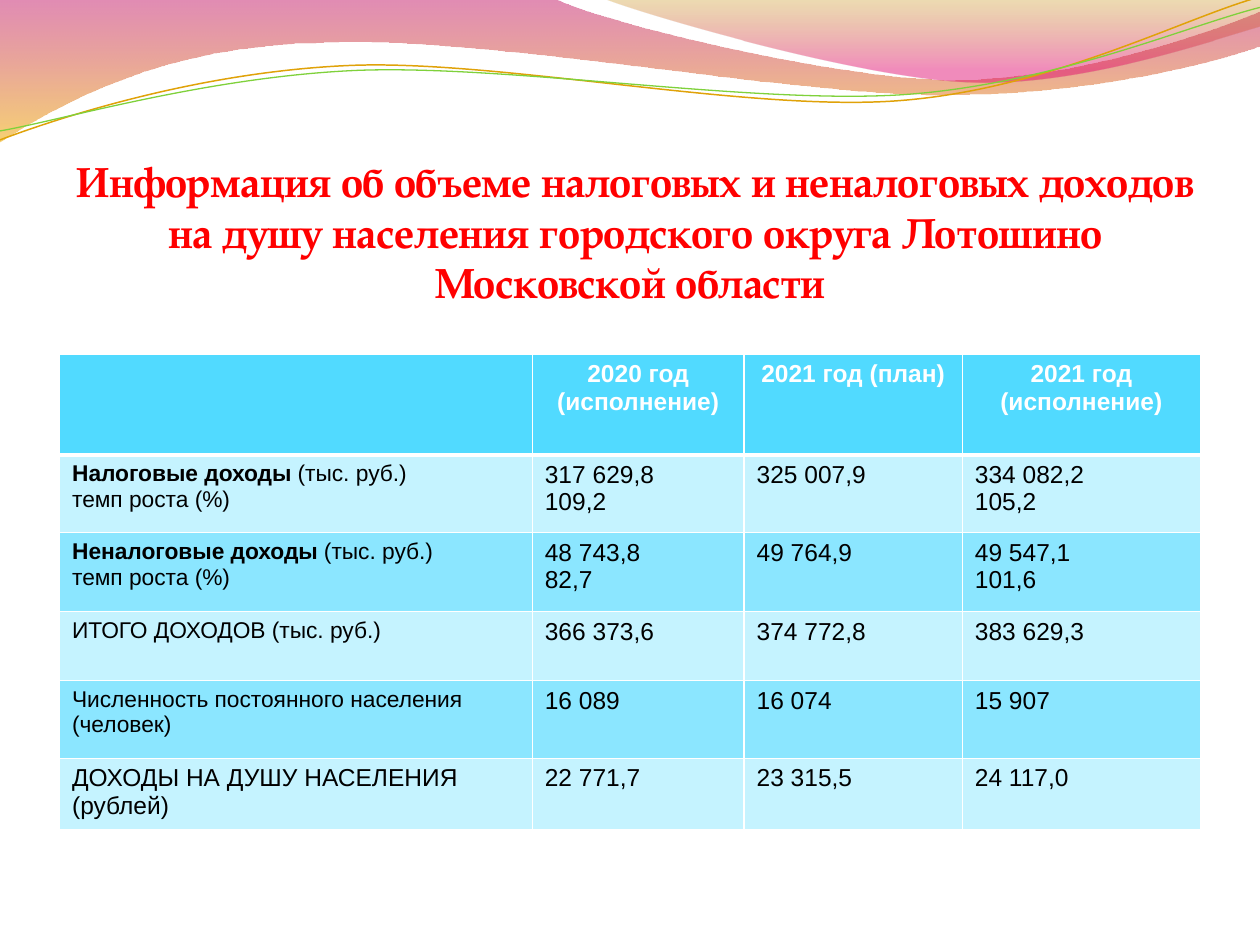
from math import cos, radians, sin

from lxml.etree import SubElement
from pptx import Presentation
from pptx.dml.color import RGBColor as Rgb
from pptx.enum.text import MSO_ANCHOR as Anchor, PP_ALIGN as Align
from pptx.oxml.ns import qn
from pptx.util import Cm, Pt

# Content
TITLE = ("Информация об объеме налоговых и неналоговых доходов на душу населения "
         "городского округа Лотошино Московской области ")
HEADER = ["", "2020 год (исполнение)", "2021 год (план)", "2021 год (исполнение)"]
UNIT, GROWTH = "(тыс. руб.)", "темп роста (%)"
# Each row: bold lead, label lines, label size name, values (one list of lines per year)
ROWS = [
    ("Налоговые доходы ", [UNIT, GROWTH], "label",
     [["317 629,8", "109,2"], ["325 007,9"], ["334 082,2", "105,2"]]),
    ("Неналоговые доходы ", [UNIT, GROWTH], "label",
     [["48 743,8", "82,7"], ["49 764,9"], ["49 547,1", "101,6"]]),
    ("", ["ИТОГО ДОХОДОВ (тыс. руб.)"], "label",
     [["366 373,6"], ["374 772,8"], ["383 629,3"]]),
    ("", ["Численность постоянного населения (человек)"], "label",
     [["16 089"], ["16 074"], ["15 907"]]),
    ("", ["ДОХОДЫ НА ДУШУ НАСЕЛЕНИЯ (рублей)"], "value",
     [["22 771,7"], ["23 315,5"], ["24 117,0"]]),
]
COLUMN_WIDTHS = [9.53, 4.27, 4.4, 4.8]
ROW_HEIGHTS = [2.03, 1.57, 1.59, 1.39, 1.57, 1.43]

THEME = {
    "title_font": "TeX Gyre Pagella", "body_font": "Arial",
    "title": 24, "value": 14, "label": 13,
    "red": "FF0000", "black": "000000", "white": "FFFFFF",
    "header": "51DAFF", "bands": ["C5F3FF", "8BE6FF"],
    "gold": "E0A209", "green": "7FD13B",
    # Gradient stops: position, colour, opacity in percent
    "left_ribbon": [(0, "BD0059", 45), (100, "F0AB00", 55)],
    "right_ribbon": [(0, "C38B00", 30), (80, "E1006B", 45)],
}

# Outlines in cm: a segment of one point is a line, of three points a Bezier curve
RIBBONS = [
    ("left_ribbon", (0, -0.03), [
        [(11.18, -0.03)],
        [(12.09, 0.43), (16.87, 1.6), (19.25, 1.6)],
        [(21.67, 1.6), (24.33, 0.66), (25.4, 0.23)],
        [(25.43, 0.91)],
        [(24.97, 1.12), (22.1, 1.93), (18.95, 1.91)],
        [(15.8, 1.91), (9.7, 0.71), (6.53, 0.86)],
        [(3.28, 0.89), (1.17, 2.11), (-0.03, 2.87)],
        [(0, -0.03)]]),
    ("right_ribbon", (12.17, -0.03), [
        [(12.93, 0.28), (17.32, 1.57), (19.53, 1.65)],
        [(21.74, 1.75), (24.41, 0.81), (25.4, 0.53)],
        [(25.4, 0)],
        [(12.17, -0.03)]]),
]
WAVE_TILT = 2.7
WAVES = [
    ("gold", 0.85, (12.67, 1.46), (0, 2.82), [
        [(1.22, 2.36), (4.01, 1.45), (7.04, 1.32)],
        [(10.03, 1.19), (15.06, 2.26), (18.11, 2.03)],
        [(21.16, 1.8), (23.83, 0.38), (25.35, -0.05)]]),
    ("green", 0.75, (12.69, 1.5), (0, 2.64), [
        [(1.19, 2.44), (4.17, 1.55), (7.19, 1.42)],
        [(10.24, 1.3), (15.16, 2.11), (18.21, 1.91)],
        [(21.23, 1.7), (23.9, 0.53), (25.4, 0.15)]]),
]


def color(name):
    return Rgb.from_string(THEME.get(name, name))


def turn(point, center, degrees):
    c, s = cos(radians(degrees)), sin(radians(degrees))
    x, y = point[0] - center[0], point[1] - center[1]
    return center[0] + x * c - y * s, center[1] + x * s + y * c


def draw(slide, start, segments, close):
    """Lay every point as a line, then merge each curve's three lines into one Bezier."""
    points = [(Cm(x), Cm(y)) for segment in segments for x, y in segment]
    builder = slide.shapes.build_freeform(Cm(start[0]), Cm(start[1]))
    builder.add_line_segments(points, close=close)
    shape = builder.convert_to_shape()
    shape.shadow.inherit = False
    lines = iter(list(shape.element.iter(qn("a:lnTo"))))
    for segment in segments:
        group = [next(lines) for _ in segment]
        if len(group) == 3:
            curve = group[0].makeelement(qn("a:cubicBezTo"))
            group[0].addprevious(curve)
            for line in group:
                curve.append(line[0])
                line.getparent().remove(line)
    return shape


def add_ribbon(slide, name, start, segments):
    shape = draw(slide, start, segments, True)
    shape.line.fill.background()
    shape.fill.gradient()
    shape.fill.gradient_angle = 270
    for stop, (position, rgb, _) in zip(shape.fill.gradient_stops, THEME[name]):
        stop.position = position / 100
        stop.color.rgb = color(rgb)
    for tint, (_, _, opacity) in zip(shape.element.spPr.iter(qn("a:srgbClr")), THEME[name]):
        SubElement(tint, qn("a:alpha"), val=str(opacity * 1000))


def add_wave(slide, name, width, center, start, segments):
    level = [[turn(point, center, WAVE_TILT) for point in segment] for segment in segments]
    shape = draw(slide, turn(start, center, WAVE_TILT), level, False)
    shape.rotation = 360 - WAVE_TILT
    shape.fill.background()
    shape.line.color.rgb = color(name)
    shape.line.width = Pt(width)


def set_font(font, face, size, tint, bold):
    font.name, font.size, font.bold = THEME[face], Pt(THEME[size]), bold
    font.color.rgb = color(tint)


def style_cell(cell, fill, bottom=1):
    properties = cell._tc.get_or_add_tcPr()
    for side, width in (("L", 1), ("R", 1), ("T", 1), ("B", bottom)):
        line = SubElement(properties, qn(f"a:ln{side}"), w=str(Pt(width)))
        SubElement(SubElement(line, qn("a:solidFill")), qn("a:srgbClr"), val=THEME["white"])
    cell.fill.solid()
    cell.fill.fore_color.rgb = color(fill)


def write_cell(cell, lines, size, tint="black", bold=False, align=Align.LEFT, lead=""):
    frame = cell.text_frame
    for index, text in enumerate(lines):
        para = frame.add_paragraph() if index else frame.paragraphs[0]
        para.alignment = align
        set_font(para.font, "body_font", size, tint, bold)
        if lead and not index:
            span = para.add_run()
            span.text = lead
            span.font.bold = True
        para.add_run().text = text


def add_title(slide):
    box = slide.shapes.add_textbox(Cm(1.19), Cm(2.39), Cm(23.24), Cm(3.8))
    frame = box.text_frame
    frame.word_wrap = True
    frame.vertical_anchor = Anchor.BOTTOM
    frame.margin_left = frame.margin_right = frame.margin_bottom = 0
    frame.margin_top = Cm(0.13)
    para = frame.paragraphs[0]
    para.text = TITLE
    para.alignment = Align.CENTER
    set_font(para.font, "title_font", "title", "red", True)


def add_income_table(slide):
    table = slide.shapes.add_table(
        len(ROW_HEIGHTS), len(COLUMN_WIDTHS), Cm(1.2), Cm(7.14),
        Cm(sum(COLUMN_WIDTHS)), Cm(sum(ROW_HEIGHTS))).table
    for column, width in zip(table.columns, COLUMN_WIDTHS):
        column.width = Cm(width)
    for row, height in zip(table.rows, ROW_HEIGHTS):
        row.height = Cm(height)
    for column, text in enumerate(HEADER):
        cell = table.cell(0, column)
        style_cell(cell, "header", bottom=3)
        write_cell(cell, [text] if text else [], "value", "white", True, Align.CENTER)
    for number, (lead, label, size, values) in enumerate(ROWS, 1):
        for column, lines in enumerate([label, *values]):
            cell = table.cell(number, column)
            style_cell(cell, THEME["bands"][(number - 1) % 2])
            if column:
                write_cell(cell, lines, "value")
            else:
                write_cell(cell, lines, size, lead=lead)


def main():
    deck = Presentation()
    deck.slide_width, deck.slide_height = Cm(25.4), Cm(19.05)
    page = deck.slides.add_slide(deck.slide_layouts[6])
    # Decorative top edge
    for ribbon in RIBBONS:
        add_ribbon(page, *ribbon)
    for wave in WAVES:
        add_wave(page, *wave)
    # Heading and figures
    add_title(page)
    add_income_table(page)
    deck.save("out.pptx")


if __name__ == "__main__":
    main()
